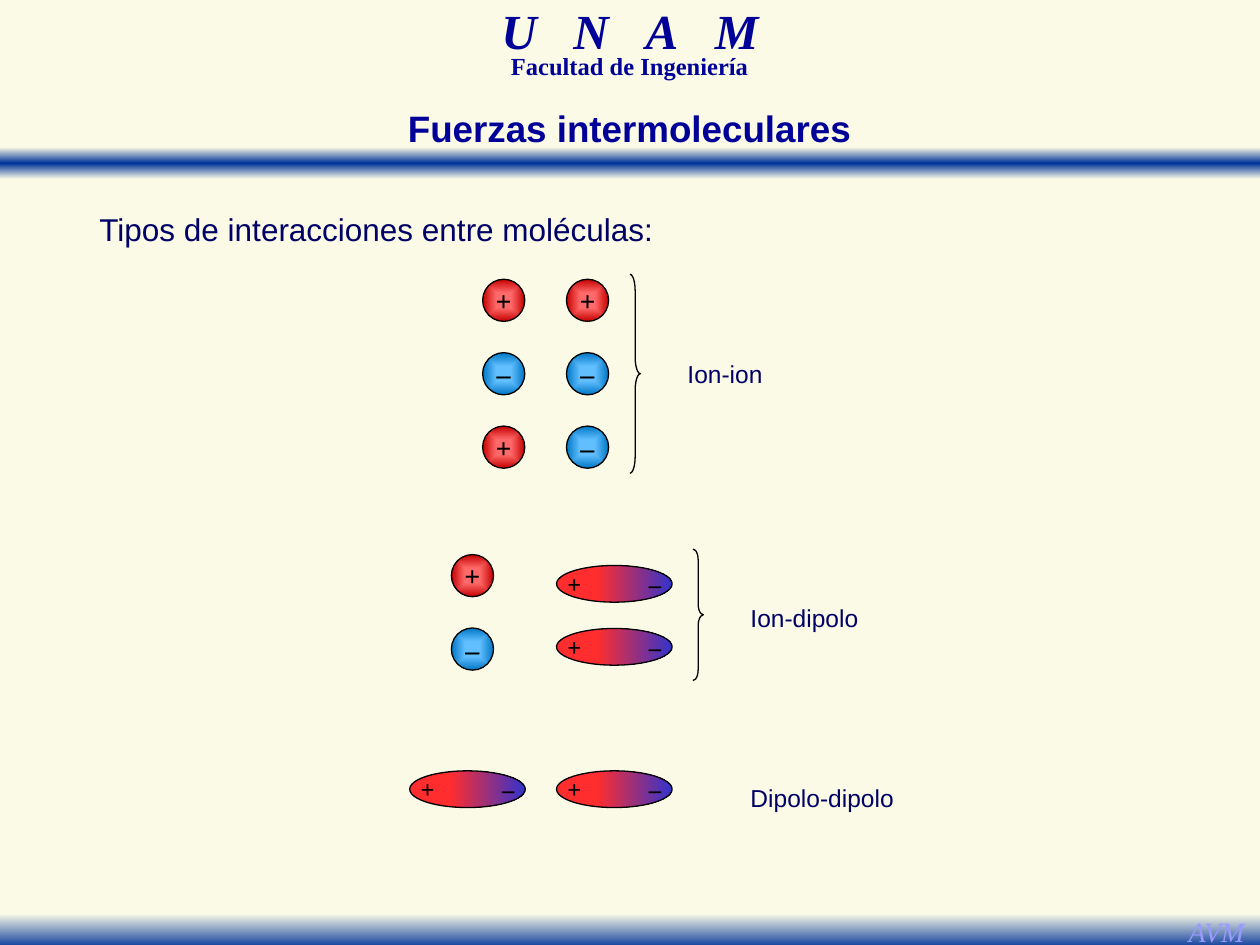
from dataclasses import dataclass

from pptx import Presentation
from pptx.dml.color import RGBColor
from pptx.enum.shapes import MSO_SHAPE as Preset
from pptx.enum.text import MSO_ANCHOR as Anchor, MSO_AUTO_SIZE as AutoSize, PP_ALIGN as Align
from pptx.oxml import parse_xml
from pptx.oxml.ns import nsdecls, qn
from pptx.util import Cm, Pt


@dataclass(frozen=True)
class Theme:
    paper: str = "FAFAE6"
    band: str = "003399"
    heading: str = "000099"
    body: str = "000066"
    signature: str = "9999FF"
    ink: str = "000000"
    cation: tuple = ((35, "FF6969"), (100, "C50000"))
    anion: tuple = ((35, "61BFFF"), (100, "0076C5"))
    dipole: tuple = ((35, "FF2D2D"), (100, "3333CC"))
    sans: str = "Arial"
    serif: str = "Times New Roman"
    unam_size: int = 28
    title_size: int = 21
    lead_size: int = 18
    ion_size: int = 16
    small_size: int = 14


theme = Theme()
LINEAR = '<a:lin ang="{}" scaled="0"/>'
ACROSS, DOWN = LINEAR.format(0), LINEAR.format(90 * 60000)
FROM_CENTRE = '<a:path path="shape"><a:fillToRect l="50000" t="50000" r="50000" b="50000"/></a:path>'


def add_filled(preset, box, stops, direction):
    """Add a preset shape with a gradient of (percent, colour) stops."""
    shape = slide.shapes.add_shape(preset, *map(Cm, box))
    shape.shadow.inherit = False
    shape.fill.gradient()
    plain = shape._element.spPr.find(qn("a:gradFill"))
    marks = "".join(f'<a:gs pos="{at * 1000}"><a:srgbClr val="{color}"/></a:gs>' for at, color in stops)
    plain.getparent().replace(plain, parse_xml(
        f'<a:gradFill {nsdecls("a")} rotWithShape="1"><a:gsLst>{marks}</a:gsLst>{direction}</a:gradFill>'))
    shape.line.fill.background()
    return shape


def write(shape, text, size, color, font=theme.serif, align=Align.LEFT, bold=False,
          italic=False, wrap=True, gap=0):
    """Set one styled line; gap widens each space by that many points."""
    frame = shape.text_frame
    frame.auto_size = AutoSize.NONE
    frame.word_wrap = wrap
    line = frame.paragraphs[0]
    line.alignment = align
    line.space_before = Pt(0)
    for piece in text.replace(" ", "| |").split("|") if gap else [text]:
        run = line.add_run()
        run.text = piece
        run.font.name, run.font.size = font, Pt(size)
        run.font.bold, run.font.italic = bold, italic
        run.font.color.rgb = RGBColor.from_string(color)
        if gap and piece == " ":
            run.font._element.set("spc", str(gap * 100))
    return line


deck = Presentation()
deck.slide_width, deck.slide_height = Cm(25.4), Cm(19.05)
slide = deck.slides.add_slide(deck.slide_layouts[1])
slide.background.fill.solid()
slide.background.fill.fore_color.rgb = RGBColor.from_string(theme.paper)

# Bands and institutional heading
add_filled(Preset.RECTANGLE, (0, 2.97, 25.4, 0.64),
           ((0, theme.paper), (50, theme.band), (100, theme.paper)), DOWN)
add_filled(Preset.RECTANGLE, (0, 18.42, 25.4, 0.71), ((0, theme.paper), (100, theme.band)), DOWN)

for text, box, size, italic, gap in (
    ("U N A M", (7.72, 0.2, 9.96, 1.09), theme.unam_size, True, 14),
    ("Facultad de Ingeniería", (8.15, 1.07, 9.09, 0.66), theme.small_size, False, 0),
):
    heading = slide.shapes.add_textbox(*map(Cm, box))
    line = write(heading, text, size, theme.heading, align=Align.CENTER, bold=True, italic=italic, gap=gap)
    line.line_spacing = 0.7

signature = slide.shapes.add_textbox(Cm(23.65), Cm(18.31), Cm(1.75), Cm(0.94))
write(signature, "AVM", theme.ion_size, theme.signature, align=Align.CENTER, italic=True, wrap=False)

# Title and lead sentence
title, lead = slide.shapes.title, slide.placeholders[1]
for holder, box in ((title, (7.19, 2.01, 11, 1.14)), (lead, (1.75, 4.11, 13.74, 1.02))):
    holder.left, holder.top, holder.width, holder.height = map(Cm, box)
    holder.text_frame.vertical_anchor = Anchor.TOP
write(title, "Fuerzas intermoleculares", theme.title_size, theme.heading, theme.sans,
      Align.CENTER, bold=True)
lead_line = write(lead, "Tipos de interacciones entre moléculas:", theme.lead_size, theme.body,
                  theme.sans, Align.JUSTIFY)
lead_format = lead_line._p.get_or_add_pPr()
lead_format.set("marL", "0")
lead_format.set("indent", "0")
lead_format.append(parse_xml(f'<a:buNone {nsdecls("a")}/>'))

# Particles: kind -> text, size in cm, type size, gradient, direction, gap
kinds = {
    "+": ("+", (0.85, 0.85), theme.ion_size, theme.cation, FROM_CENTRE, 0),
    "–": ("–", (0.85, 0.85), theme.ion_size, theme.anion, FROM_CENTRE, 0),
    "dipole": ("+ –", (2.33, 0.94 - 0.2), theme.small_size, theme.dipole, ACROSS, 35),
}
ion_rows = ("++", "––", "+–")
particles = [(kind, 9.73 + 1.69 * column, 5.63 + 1.48 * row)
             for row, pair in enumerate(ion_rows) for column, kind in enumerate(pair)]
for row, kind in enumerate("+–"):
    particles += [(kind, 9.1, 11.18 + 1.48 * row), ("dipole", 11.22, 11.4 + 1.27 * row)]
particles += [("dipole", left, 15.54) for left in (8.26, 11.22)]

for kind, left, top in particles:
    text, extent, size, stops, direction, gap = kinds[kind]
    particle = add_filled(Preset.OVAL, (left, top, *extent), stops, direction)
    particle.line.color.rgb = RGBColor.from_string(theme.ink)
    particle.line.width = Pt(0.75)
    particle.text_frame.vertical_anchor = Anchor.MIDDLE
    write(particle, text, size, theme.ink, align=Align.CENTER, bold=True, wrap=False, gap=gap)

# Braces and names of the interactions
for left, top, height, bend in ((12.7, 5.53, 4.01, 1.58), (13.97, 11.07, 2.65, 1.04)):
    brace = slide.shapes.add_shape(Preset.RIGHT_BRACE, Cm(left), Cm(top), Cm(0.21), Cm(height))
    brace.shadow.inherit = False
    brace.adjustments[0] = bend
    brace.fill.background()
    brace.line.color.rgb = RGBColor.from_string(theme.ink)
    brace.line.width = Pt(0.75)

for name, left, top, width in (
    ("Ion-ion", 13.61, 7.11, 2.62),
    ("Ion-dipolo", 14.88, 12.04, 3.1),
    ("Dipolo-dipolo", 14.88, 15.67, 3.81),
):
    label = slide.shapes.add_textbox(Cm(left), Cm(top), Cm(width), Cm(0.86))
    write(label, name, theme.small_size, theme.body, theme.sans)

deck.save("out.pptx")
